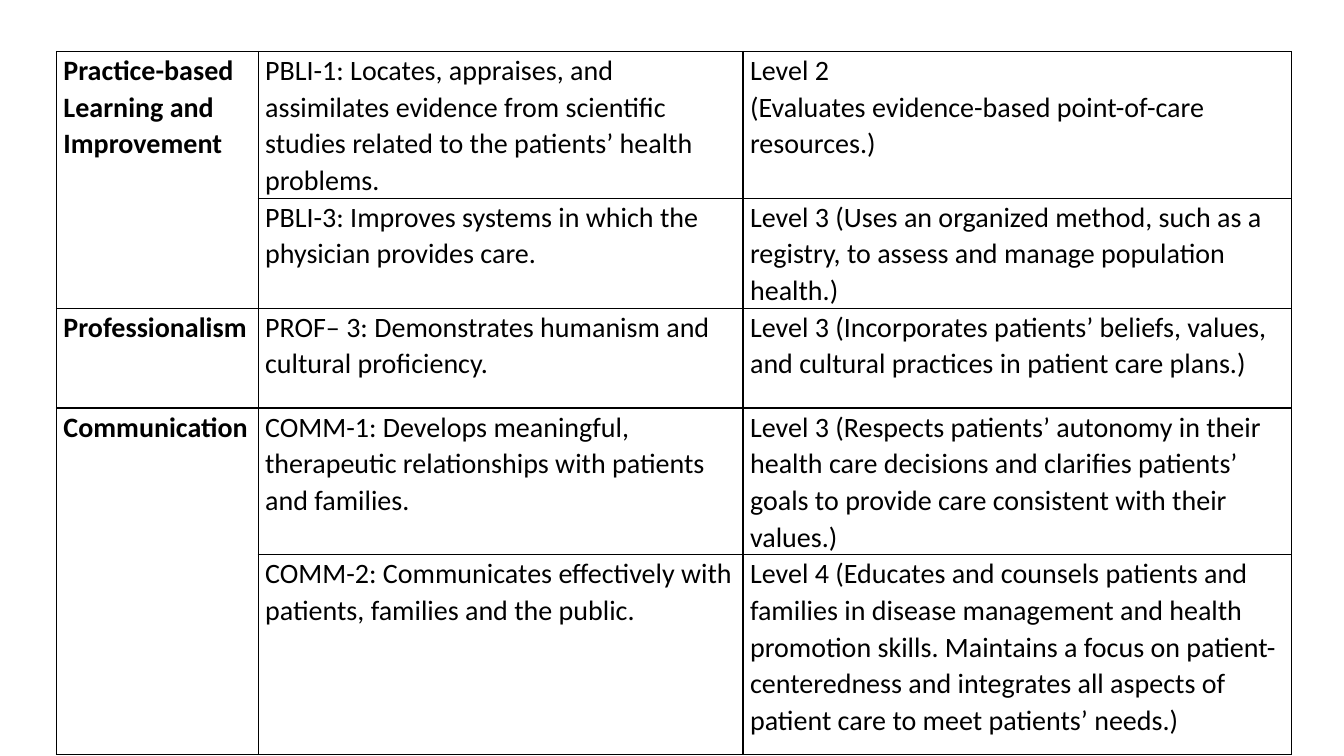
from lxml.etree import SubElement
from pptx import Presentation
from pptx.dml.color import RGBColor
from pptx.oxml.ns import qn
from pptx.util import Inches, Pt

INK, PAPER = "000000", "FFFFFF"
LEFT, TOP = 0.56, 0.51
WIDTHS = [2, 4.81, 5.44]
HEIGHTS = [1.41, 1.04, 0.99, 1.41, 1.98]

# Domain, then its (milestone, level) pairs
DOMAINS = [
    ("Practice-based Learning and Improvement", [
        ("PBLI-1: Locates, appraises, and assimilates evidence from "
         "scientific studies related to the patients’ health problems.",
         "Level 2\n(Evaluates evidence-based point-of-care resources.)"),
        ("PBLI-3: Improves systems in which the physician provides care.",
         "Level 3 (Uses an organized method, such as a registry, to assess "
         "and manage population health.)"),
    ]),
    ("Professionalism", [
        ("PROF– 3: Demonstrates humanism and cultural proficiency.",
         "Level 3 (Incorporates patients’ beliefs, values, and cultural "
         "practices in patient care plans.)"),
    ]),
    ("Communication", [
        ("COMM-1: Develops meaningful, therapeutic relationships with "
         "patients and families.",
         "Level 3 (Respects patients’ autonomy in their health care "
         "decisions and clarifies patients’ goals to provide care "
         "consistent with their values.)"),
        ("COMM-2: Communicates effectively with patients, families and "
         "the public.",
         "Level 4 (Educates and counsels patients and families in disease "
         "management and health promotion skills. Maintains a focus on "
         "patient-centeredness and integrates all aspects of patient care "
         "to meet patients’ needs.)"),
    ]),
]


def color(hue):
    return RGBColor.from_string(hue)


def frame(cell):
    """Draw a thin line on all four sides; must come before the fill."""
    props = cell._tc.get_or_add_tcPr()
    for side in ("lnL", "lnR", "lnT", "lnB"):
        line = SubElement(props, qn(f"a:{side}"), w=str(Pt(1)))
        fill = SubElement(line, qn("a:solidFill"))
        SubElement(fill, qn("a:srgbClr"), val=INK)


def style(cell):
    frame(cell)
    cell.fill.solid()
    cell.fill.fore_color.rgb = color(PAPER)
    cell.margin_left = cell.margin_right = Inches(0.07)
    cell.margin_top = cell.margin_bottom = 0


def write(cell, text, bold=False):
    cell.text_frame.text = text
    for para in cell.text_frame.paragraphs:
        para.line_spacing = 1.07
        for run in para.runs:
            font = run.font
            font.name, font.size, font.bold = "Calibri", Pt(20), bold
            font.color.rgb = color(INK)


def main():
    deck = Presentation()
    deck.slide_width, deck.slide_height = Inches(13.33), Inches(7.5)
    slide = deck.slides.add_slide(deck.slide_layouts[6])
    table = slide.shapes.add_table(
        len(HEIGHTS), len(WIDTHS), Inches(LEFT), Inches(TOP),
        Inches(sum(WIDTHS)), Inches(sum(HEIGHTS))).table
    table.first_row = table.horz_banding = False
    for col, width in zip(table.columns, WIDTHS):
        col.width = Inches(width)
    for row, height in zip(table.rows, HEIGHTS):
        row.height = Inches(height)
    for cell in table.iter_cells():
        style(cell)

    start = 0
    for domain, pairs in DOMAINS:
        head = table.cell(start, 0)
        if len(pairs) > 1:
            head.merge(table.cell(start + len(pairs) - 1, 0))
        write(head, domain, bold=True)
        for row, pair in enumerate(pairs, start):
            for col, text in enumerate(pair, 1):
                write(table.cell(row, col), text)
        start += len(pairs)
    deck.save("out.pptx")


if __name__ == "__main__":
    main()
